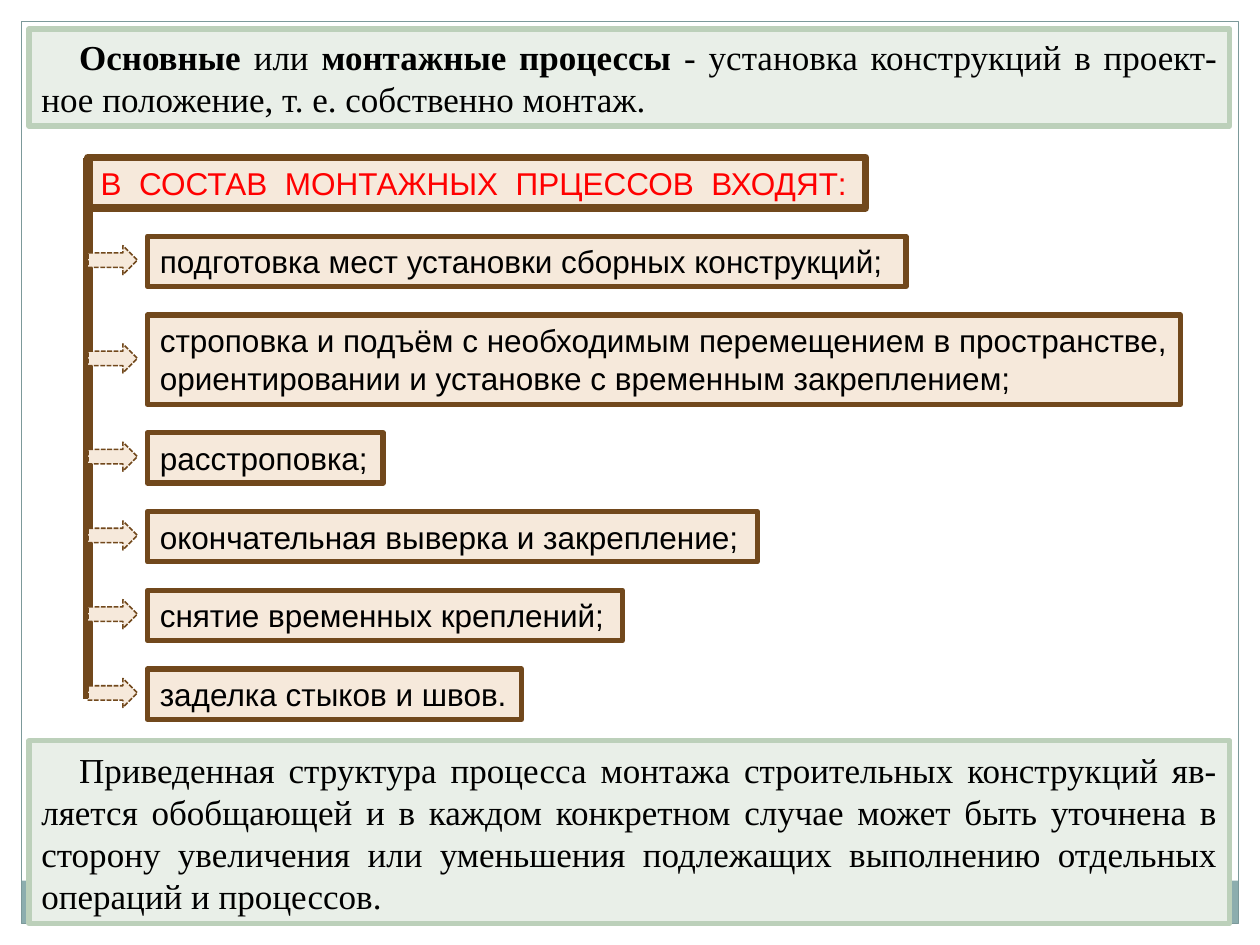
import pptx
import pptx.util
import pptx.dml.color
import pptx.enum.dml
import pptx.enum.shapes
import pptx.enum.text
import pptx.oxml

# Content: notes are lists of (text, style) runs, steps are (text, width, lines)
INTRO = [
    ("Основные ", "b"), ("или", ""), (" монтажные процессы ", "b"), ("- ", "i"),
    ("установка конструкций в проект-ное положение, т. е. собственно монтаж. ", ""),
]
HEAD = [("В  СОСТАВ  МОНТАЖНЫХ  ПРЦЕССОВ  ВХОДЯТ:", "")]
STEPS = [
    ("подготовка мест установки сборных конструкций;", 6.02, 1),
    ("строповка и подъём с необходимым перемещением в пространстве, "
     "ориентировании и установке с временным закреплением;", 8.2, 2),
    ("расстроповка;", 1.87, 1),
    ("окончательная выверка и закрепление;", 4.84, 1),
    ("снятие временных креплений;", 3.77, 1),
    ("заделка стыков и швов.", 2.97, 1),
]
CLOSE = [
    ("Приведенная структура процесса монтажа строительных конструкций яв-ляется "
     "обобщающей и в каждом конкретном случае может быть уточнена в сторону увеличения "
     "или уменьшения подлежащих выполнению отдельных операций и процессов.", ""),
]

THEME = {
    "white": "FFFFFF", "band": "8CADAE", "frame": "7C999A",
    "sage": "E9EFE8", "edge": "BCD0BA", "cream": "F6E9DB", "brown": "71481C",
    "black": "000000", "red": "FF0000",
    "serif": "Times New Roman", "sans": "Arial", "note": 20, "step": 18,
}

# Layout in inches
WIDE, HIGH = 10, 7.5
RIM = 0.17                  # white border of the slide
NOTE_X, NOTE_W = 0.23, 9.53
STEM_X, STEP_X = 0.7, 1.17
TOP, GAP = 1.875, 0.225     # first step and the gap between steps
TALL = {1: 0.4, 2: 0.71}    # box height by number of lines
ARROW_W, ARROW_H = 0.39, 0.23

KIND = pptx.enum.shapes.MSO_SHAPE
INCH = pptx.util.Inches
ALIGN = pptx.enum.text.PP_ALIGN
ANCHOR = pptx.enum.text.MSO_ANCHOR


def tint(name):
    return pptx.dml.color.RGBColor.from_string(THEME[name])


def shape(page, x, y, w, h, kind=KIND.RECTANGLE, fill=None, line=None, thick=1, dash=None):
    item = page.shapes.add_shape(kind, INCH(x), INCH(y), INCH(w), INCH(h))
    item.shadow.inherit = False
    if fill:
        item.fill.solid()
        item.fill.fore_color.rgb = tint(fill)
    else:
        item.fill.background()
    if line:
        item.line.color.rgb = tint(line)
        item.line.width = pptx.util.Pt(thick)
        if dash:
            item.line.dash_style = dash
    else:
        item.line.fill.background()
    return item


def write(item, runs, font="sans", size="step", color="black",
          align=ALIGN.LEFT, anchor=ANCHOR.TOP, indent=0):
    frame = item.text_frame
    frame.word_wrap = True
    frame.auto_size = pptx.enum.text.MSO_AUTO_SIZE.SHAPE_TO_FIT_TEXT
    frame.vertical_anchor = anchor
    para = frame.paragraphs[0]
    para.alignment = align
    if indent:
        props = para._p.get_or_add_pPr()
        props.set("marL", "0")
        props.set("indent", str(INCH(indent)))
    for text, style in runs:
        run = para.add_run()
        run.text = text
        run.font.name = THEME[font]
        run.font.size = pptx.util.Pt(THEME[size])
        run.font.color.rgb = tint(color)
        run.font.bold = "b" in style
        run.font.italic = "i" in style


def note(page, y, h, runs, anchor):
    item = shape(page, NOTE_X, y, NOTE_W, h, fill="sage", line="edge", thick=3)
    write(item, runs, font="serif", size="note", align=ALIGN.JUSTIFY,
          anchor=anchor, indent=0.3)


def stem(page, top, end):
    line = page.shapes.add_connector(pptx.enum.shapes.MSO_CONNECTOR.STRAIGHT,
                                     INCH(STEM_X), INCH(top), INCH(STEM_X), INCH(end))
    line.line.color.rgb = tint("brown")
    line.line.width = pptx.util.Pt(6)
    props = line._element.spPr
    props.append(props.makeelement(pptx.oxml.ns.qn("a:effectLst"), {}))


def main():
    deck = pptx.Presentation()
    deck.slide_width, deck.slide_height = INCH(WIDE), INCH(HIGH)
    page = deck.slides.add_slide(deck.slide_layouts[6])

    # Border, bottom band and thin frame
    for area in [(0, 0, WIDE, RIM), (WIDE - RIM, 0, RIM, HIGH), (0, 0, RIM, HIGH)]:
        shape(page, *area, fill="white")
    inner = WIDE - 2 * RIM
    shape(page, RIM, 6.99, inner, 0.34, fill="band")
    shape(page, RIM, RIM, inner, HIGH - 2 * RIM, line="frame", thick=0.75)

    # Opening and closing notes
    note(page, 0.23, 0.77, INTRO, ANCHOR.TOP)
    note(page, 5.88, 1.45, CLOSE, ANCHOR.MIDDLE)

    # Heading with the stem that carries the arrows
    head = shape(page, STEM_X, 1.25, 6.17, TALL[1], fill="cream", line="brown", thick=4.5)
    write(head, HEAD, color="red")
    stem(page, 1.25, 5.55)

    # Steps, each with an arrow at its middle
    y = TOP
    for text, width, lines in STEPS:
        tall = TALL[lines]
        box = shape(page, STEP_X, y, width, tall, fill="cream", line="brown", thick=3)
        write(box, [(text, "")])
        shape(page, STEM_X, y + (tall - ARROW_H) / 2 - 0.01, ARROW_W, ARROW_H,
              kind=KIND.RIGHT_ARROW, fill="cream", line="brown", thick=0.9,
              dash=pptx.enum.dml.MSO_LINE.SQUARE_DOT)
        y += tall + GAP

    deck.save("out.pptx")


if __name__ == "__main__":
    main()
